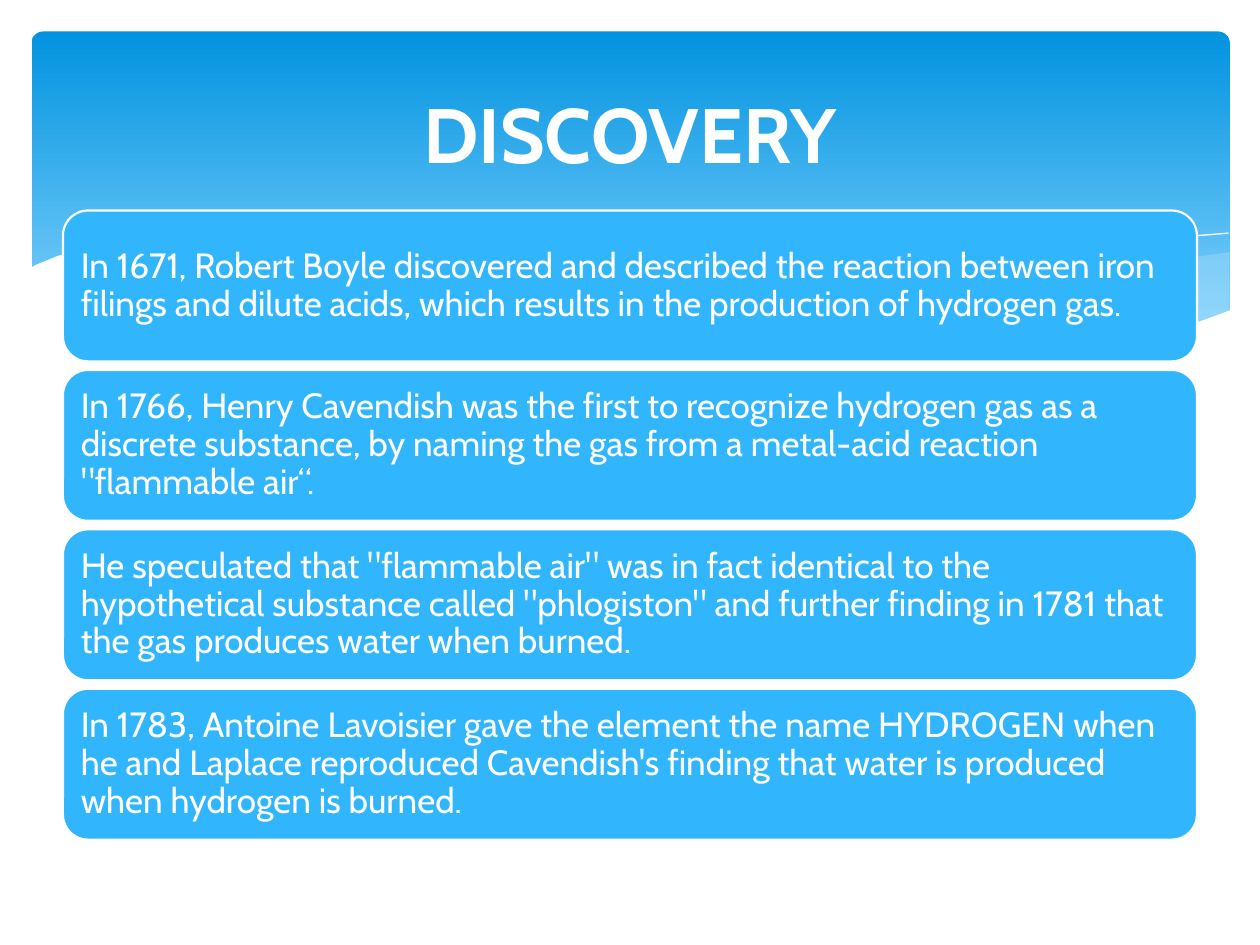
from pptx import Presentation
from pptx.dml.color import RGBColor as RGB
from pptx.enum.shapes import MSO_SHAPE as Shape
from pptx.enum.text import MSO_ANCHOR as Anchor, PP_ALIGN as Align
from pptx.util import Pt
from lxml.etree import SubElement

hue = RGB.from_string


def trace(points, close=True):
    # Points are scaled by 100 to keep their decimals
    path = [(x * 100, y * 100) for x, y in points]
    draft = slide.shapes.build_freeform(*path[0], scale=Pt(1) / 100)
    draft.add_line_segments(path[1:], close=close)
    form = draft.convert_to_shape()
    form.shadow.inherit = False
    return form


deck = Presentation()
deck.slide_width, deck.slide_height = Pt(720), Pt(540)
slide = deck.slides.add_slide(deck.slide_layouts[5])

# Blue gradient banner
banner = slide.shapes.add_shape(
    Shape.ROUNDED_RECTANGLE, Pt(18), Pt(18), Pt(684.7), Pt(194.4))
banner.adjustments[0] = 0.034
banner.shadow.inherit = False
banner.line.fill.background()
banner.fill.gradient()
banner.fill.gradient_angle = 270
for stop, (place, tone) in zip(banner.fill.gradient_stops,
                               [(0, "0293E0"), (0.9, "83D3FE")]):
    stop.position = place
    stop.color.rgb = hue(tone)

# Translucent wave at the right
haze = trace([
    (702.7, 144), (682.6, 146.9), (662.4, 151.2), (641.5, 155.5),
    (619.9, 160.6), (579.6, 170.6), (542.2, 178.6), (508.3, 185),
    (475.9, 190.8), (507.6, 194.7), (536.4, 198), (562.3, 199.4),
    (586.1, 200.2), (607.7, 199.4), (627.8, 197.3), (645.8, 194.4),
    (663.1, 190.8), (678.2, 186.5), (693.4, 181.4), (702.7, 177.8)])
haze.line.fill.background()
haze.fill.solid()
haze.fill.fore_color.rgb = hue("C6E7FC")
tint = haze.fill._xPr.solidFill[0]
SubElement(tint, tint.tag.replace("srgbClr", "alpha"), val="29000")

# Thin white curve
curve = trace([
    (441.4, 185), (470.2, 177.1), (500.4, 169.2), (538.6, 160.6),
    (580.3, 151.2), (623.5, 143.3), (655.2, 138.2), (684.7, 134.6),
    (702, 133.2)], close=False)
curve.fill.background()
curve.line.color.rgb = hue("FFFFFF")
curve.line.width = Pt(0)

# White wave that cuts off the banner
wave = trace([
    (703.4, 177.1), (684, 184.3), (662.4, 190.8), (630, 197.3),
    (602.6, 198.7), (582.5, 199.4), (547.9, 198), (509.8, 194.4),
    (466.6, 188.6), (434.2, 182.9), (399.6, 176.4), (362.2, 167.8),
    (321.8, 158.4), (281.5, 149), (244.8, 141.8), (210.2, 136.8),
    (180, 133.9), (151.9, 132.5), (127.4, 132.5), (95, 133.9),
    (68.4, 137.5), (48.2, 141.8), (33.1, 146.2), (20.9, 151.2),
    (16.6, 153.4), (16.6, 236.9), (703.4, 236.9)])
wave.line.fill.background()
wave.fill.solid()
wave.fill.fore_color.rgb = hue("FFFFFF")

# Cards, one for each step of the story
facts = [
    "In 1671, Robert Boyle discovered and described the reaction "
    "between iron filings and dilute acids, which results in the "
    "production of hydrogen gas.",
    "In 1766, Henry Cavendish was the first to recognize hydrogen gas "
    "as a discrete substance, by naming the gas from a metal-acid "
    "reaction \"flammable air“.",
    "He speculated that \"flammable air\" was in fact identical to the "
    "hypothetical substance called \"phlogiston\" and further finding "
    "in 1781 that the gas produces water when burned.",
    "In 1783, Antoine Lavoisier gave the element the name HYDROGEN "
    "when he and Laplace reproduced Cavendish's finding that water is "
    "produced when hydrogen is burned.",
]
for row, fact in enumerate(facts):
    card = slide.shapes.add_shape(
        Shape.ROUNDED_RECTANGLE, Pt(36), Pt(120.3 + 91.1 * row),
        Pt(648), Pt(86.2))
    card.shadow.inherit = False
    card.fill.solid()
    card.fill.fore_color.rgb = hue("31B6FD")
    card.line.color.rgb = hue("FFFFFF")
    card.line.width = Pt(1.25)
    frame = card.text_frame
    frame.word_wrap = True
    frame.vertical_anchor = Anchor.MIDDLE
    frame.margin_left = frame.margin_right = Pt(6)
    frame.margin_top = frame.margin_bottom = Pt(6)
    frame.text = fact
    para = frame.paragraphs[0]
    para.alignment = Align.LEFT
    para.line_spacing = 0.9
    para.font.size = Pt(20)
    para.font.name = "Cabin"
    para.font.color.rgb = hue("FFFFFF")

# Title, brought to the front
title = slide.shapes.title
title.left, title.top, title.width, title.height = (
    Pt(36), Pt(26.6), Pt(648), Pt(98.6))
title.text_frame.text = "DISCOVERY"
title.text_frame.vertical_anchor = Anchor.MIDDLE
head = title.text_frame.paragraphs[0]
head.alignment = Align.CENTER
head.font.size = Pt(44)
head.font.bold = True
head.font.name = "Cabin"
head.font.color.rgb = hue("FFFFFF")
slide.shapes._spTree.append(title._element)

deck.save("out.pptx")
